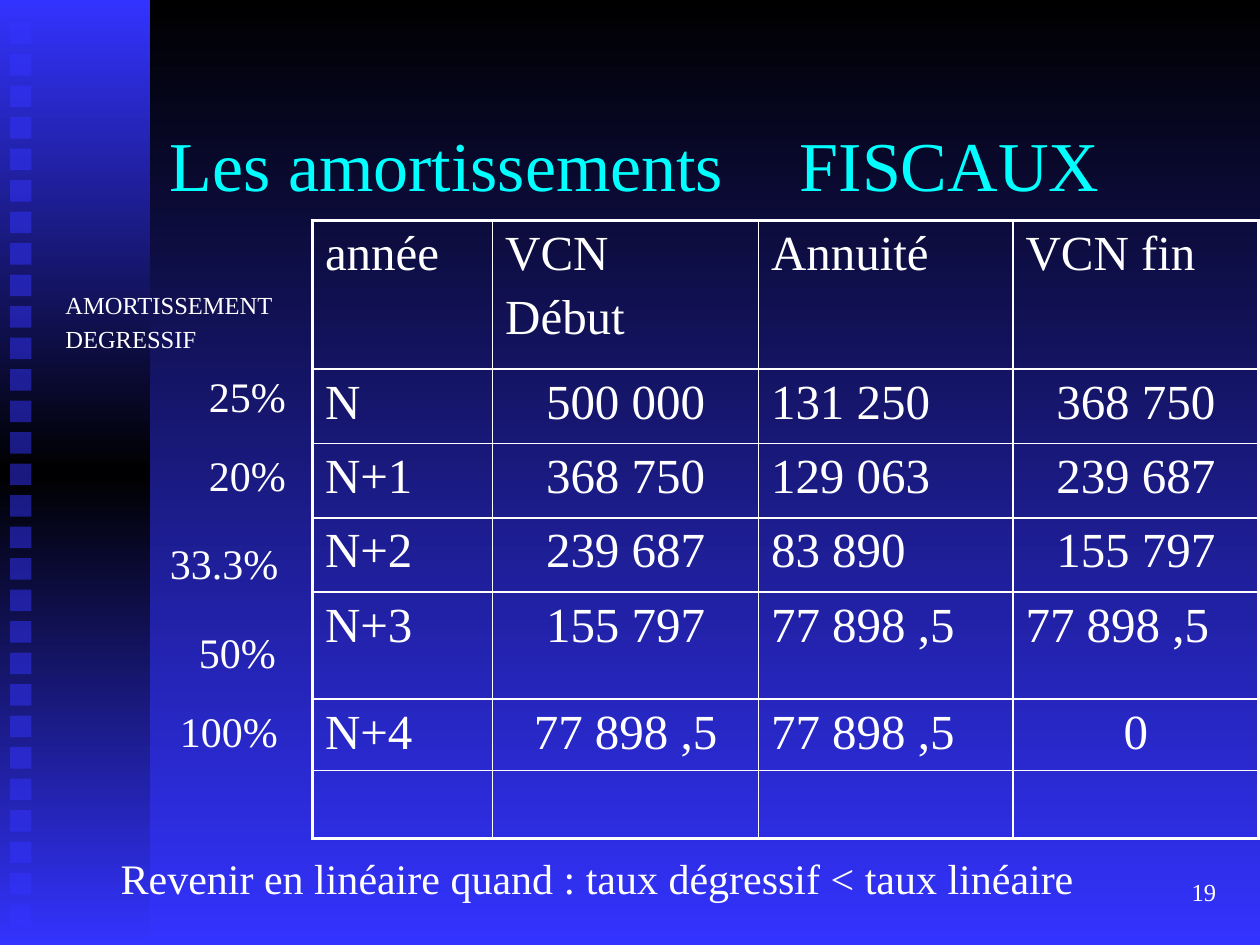
import pptx
import pptx.dml.color
import pptx.enum.shapes
import pptx.enum.text
import pptx.oxml
import pptx.oxml.ns
import pptx.util

Inches = pptx.util.Inches
Pt = pptx.util.Pt
RGBColor = pptx.dml.color.RGBColor
ALIGN = pptx.enum.text.PP_ALIGN
ANCHOR = pptx.enum.text.MSO_ANCHOR

BLACK = RGBColor(0x00, 0x00, 0x00)
BLUE = RGBColor(0x33, 0x33, 0xFF)
CYAN = RGBColor(0x00, 0xFF, 0xFF)
WHITE = RGBColor(0xFF, 0xFF, 0xFF)
FONT = "Times New Roman"
NAMESPACE = pptx.oxml.ns.nsdecls("a")

COLUMN_WIDTHS = [1.43, 2.11, 2.02, 1.95]
ROW_HEIGHTS = [1.18, 0.59, 0.59, 0.59, 0.85, 0.55, 0.54]
ROWS = [
    ["année", "VCN\nDébut", "Annuité", "VCN fin"],
    ["N", "500 000", "131 250", "368 750"],
    ["N+1", "368 750", "129 063", "239 687"],
    ["N+2", "239 687", "83 890", "155 797"],
    ["N+3", "155 797", "77 898 ,5", "77 898 ,5"],
    ["N+4", "77 898 ,5", "77 898 ,5", "0"],
    ["", "", "", ""],
]
CENTRED = {(row, 1) for row in range(1, 6)} | {(row, 3) for row in (1, 2, 3, 5)}
RATES = [
    ("25%", 1.56, 2.89, 0.86),
    ("20%", 1.56, 3.52, 0.86),
    ("33.3%", 1.25, 4.22, 1.17),
    ("50%", 1.48, 4.92, 0.86),
    ("100%", 1.33, 5.55, 1.02),
]


def set_gradient(fill, element, colors):
    """Fill from top to bottom with evenly spaced colours."""
    fill.gradient()
    fill.gradient_angle = 270
    stops = element.xpath(".//a:gsLst")[0]
    for stop in list(stops):
        stops.remove(stop)
    for index, color in enumerate(colors):
        position = 100000 * index // (len(colors) - 1)
        stops.append(pptx.oxml.parse_xml(
            f'<a:gs {NAMESPACE} pos="{position}"><a:srgbClr val="{color}"/></a:gs>'))


def write_text(frame, text, size, color=WHITE, align=ALIGN.LEFT):
    """Write each line of the text as a formatted paragraph."""
    for index, line in enumerate(text.split("\n")):
        para = frame.paragraphs[0] if index == 0 else frame.add_paragraph()
        para.alignment = align
        if index:
            para.space_before = Pt(size * 0.2)
        span = para.add_run()
        span.text = line
        for name, value in {"name": FONT, "size": Pt(size)}.items():
            setattr(span.font, name, value)
        span.font.color.rgb = color


def add_text(page, text, bounds, size, color=WHITE, align=ALIGN.LEFT, anchor=ANCHOR.TOP):
    """Add a wrapped text box."""
    box = page.shapes.add_textbox(*map(Inches, bounds))
    for name, value in {"word_wrap": True, "vertical_anchor": anchor}.items():
        setattr(box.text_frame, name, value)
    write_text(box.text_frame, text, size, color, align)


def add_rectangle(page, bounds):
    """Add a rectangle without outline or shadow."""
    kind = pptx.enum.shapes.MSO_SHAPE.RECTANGLE
    rectangle = page.shapes.add_shape(kind, *map(Inches, bounds))
    rectangle.shadow.inherit = False
    rectangle.line.fill.background()
    return rectangle


def add_sidebar(page):
    """Add the gradient band with its column of translucent squares."""
    band = add_rectangle(page, (0, 0, 1.19, 7.5))
    set_gradient(band.fill, band._element, [BLUE, BLACK, BLUE])
    for index in range(29):
        square = add_rectangle(page, (0.08, 0.18 + 0.25 * index, 0.17, 0.17))
        square.fill.solid()
        square.fill.fore_color.rgb = BLUE
        tint = square._element.spPr.xpath("./a:solidFill/a:srgbClr")[0]
        tint.append(pptx.oxml.parse_xml(f'<a:alpha {NAMESPACE} val="50000"/>'))


def set_borders(cell, outer_sides):
    """Draw white borders, thicker on the outer sides."""
    properties = cell._tc.get_or_add_tcPr()
    for side in "LRTB":
        width = Pt(2.25 if side in outer_sides else 1)
        properties.append(pptx.oxml.parse_xml(
            f'<a:ln{side} {NAMESPACE} w="{width}"><a:solidFill>'
            f'<a:srgbClr val="{WHITE}"/></a:solidFill></a:ln{side}>'))


def add_schedule(page):
    """Add the depreciation table."""
    bounds = (2.48, 1.75, sum(COLUMN_WIDTHS), sum(ROW_HEIGHTS))
    table = page.shapes.add_table(
        len(ROWS), len(COLUMN_WIDTHS), *map(Inches, bounds)).table
    for name in ("first_row", "horz_banding"):
        setattr(table, name, False)
    for column, width in zip(table.columns, COLUMN_WIDTHS):
        column.width = Inches(width)
    last_row, last_column = len(ROWS) - 1, len(COLUMN_WIDTHS) - 1
    for row, texts in enumerate(ROWS):
        table.rows[row].height = Inches(ROW_HEIGHTS[row])
        for column, text in enumerate(texts):
            cell = table.cell(row, column)
            outer = {"L": column == 0, "R": column == last_column,
                     "T": row == 0, "B": row == last_row}
            set_borders(cell, [side for side, edge in outer.items() if edge])
            cell.fill.background()
            if text:
                align = ALIGN.CENTER if (row, column) in CENTRED else ALIGN.LEFT
                write_text(cell.text_frame, text, 28, align=align)


def main():
    """Build the slide and save it."""
    deck = pptx.Presentation()
    deck.slide_width, deck.slide_height = Inches(10), Inches(7.5)
    page = deck.slides.add_slide(deck.slide_layouts[6])
    set_gradient(page.background.fill, page._element, [BLACK, BLUE])
    add_sidebar(page)
    add_text(page, "Les amortissements \tFISCAUX", (1.25, 0.67, 8.5, 1.25), 40,
             CYAN, anchor=ANCHOR.MIDDLE)
    add_text(page, "AMORTISSEMENT\nDEGRESSIF", (0.42, 2.25, 1.92, 1.12), 14)
    add_schedule(page)
    add_text(page, "19", (7.67, 6.83, 2.08, 0.5), 14,
             align=ALIGN.RIGHT, anchor=ANCHOR.MIDDLE)
    add_text(page, "Revenir en linéaire quand : taux dégressif < taux linéaire",
             (0.86, 6.72, 8.13, 0.5), 24)
    for rate, left, top, width in RATES:
        add_text(page, rate, (left, top, width, 0.5), 24)
    deck.save("out.pptx")


if __name__ == "__main__":
    main()
